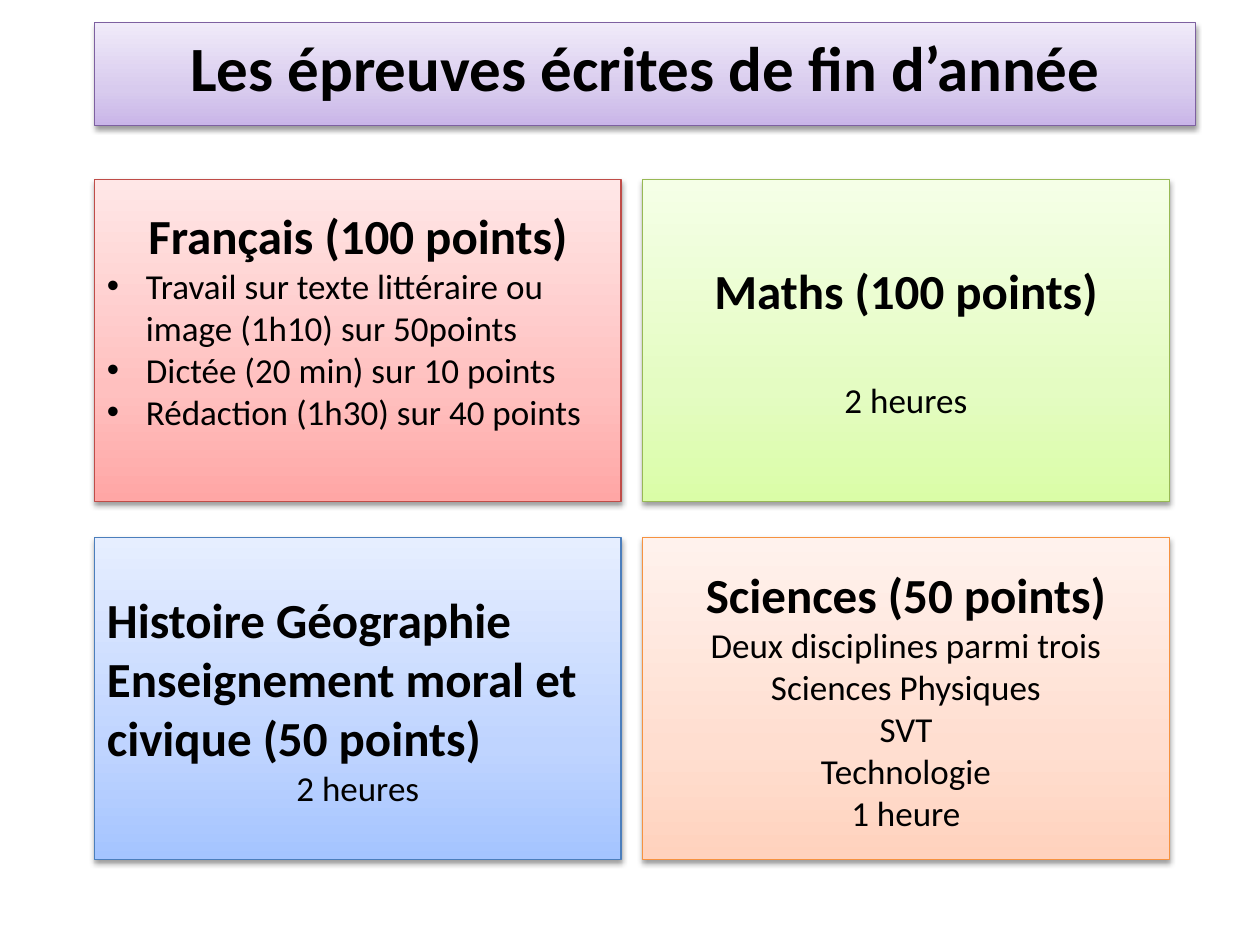
from copy import deepcopy
from lxml.etree import SubElement
from pptx import Presentation
from pptx.dml.color import RGBColor
from pptx.enum.shapes import MSO_SHAPE
from pptx.enum.text import MSO_ANCHOR, MSO_AUTO_SIZE, PP_ALIGN
from pptx.oxml.ns import qn
from pptx.util import Inches, Pt

WIDE, HIGH = 10, 7.5
LEFT, TOP = 0.075 * WIDE, 0.19 * HIGH
CELL_W, CELL_H = 0.418 * WIDE, 0.341 * HIGH
STEP_X, STEP_Y = 0.435 * WIDE, 0.379 * HIGH
STOPS = (0, 0.35, 1)
COLORS = {
    "ink": "000000",
    "violet": ("C9B5E8", "D8CBEE", "F0EAF9", "7D60A0"),
    "red": ("FFA6A5", "FFC0BF", "FFE7E7", "BF4C48"),
    "green": ("DAFDA7", "E4FCC2", "F5FFE7", "98B955"),
    "blue": ("A4C4FF", "BFD4FF", "E6EEFF", "4B7EBC"),
    "orange": ("FFD2BD", "FFDED0", "FFF2ED", "F69240"),
}
HEAD = dict(size=28, bold=True)
ITEM = dict(align=PP_ALIGN.LEFT, bullet=True)
CARDS = [
    ("red", 0.39, [
        ("Français (100 points)", HEAD),
        ("Travail sur texte littéraire ou image (1h10) sur 50points", ITEM),
        ("Dictée (20 min) sur 10 points", ITEM),
        ("Rédaction (1h30) sur 40 points", ITEM),
    ]),
    ("green", 0.05, [
        ("Maths (100 points)", HEAD),
        ("2 heures", dict(before=34)),
    ]),
    ("blue", 0.05, [
        ("Histoire Géographie Enseignement moral et civique (50 points)",
         dict(HEAD, align=PP_ALIGN.LEFT)),
        ("2 heures", {}),
    ]),
    ("orange", 0.05, [
        ("Sciences (50 points)", HEAD),
        ("Deux disciplines parmi trois", {}),
        ("Sciences Physiques", {}),
        ("SVT", {}),
        ("Technologie", {}),
        ("1 heure", {}),
    ]),
]


def write(para, text, size=20, bold=False, align=PP_ALIGN.CENTER, before=0, bullet=False):
    para.alignment = align
    para.space_before = Pt(before)
    run = para.add_run()
    run.text = text
    font = run.font
    font.name, font.size, font.bold = "Calibri", Pt(size), bold
    font.color.rgb = RGBColor.from_string(COLORS["ink"])
    if bullet:
        props = para._p.get_or_add_pPr()
        props.set("marL", str(Inches(0.31)))
        props.set("indent", str(-Inches(0.31)))
        SubElement(props, qn("a:buFont"), typeface="Arial")
        SubElement(props, qn("a:buChar"), char="•")


def shade(shape):
    shape.shadow.inherit = False
    effects = shape._element.spPr.find(qn("a:effectLst"))
    outer = SubElement(effects, qn("a:outerShdw"), blurRad=str(Pt(3.1)),
                       dist=str(Pt(1.6)), dir="5400000", rotWithShape="0")
    color = SubElement(outer, qn("a:srgbClr"), val=COLORS["ink"])
    SubElement(color, qn("a:alpha"), val="38000")


def paint(shape, name):
    *tones, edge = COLORS[name]
    fill = shape.fill
    fill.gradient()
    fill.gradient_angle = 90
    stops = shape._element.spPr.find(".//" + qn("a:gsLst"))
    stops.append(deepcopy(stops[0]))
    for stop, place, tone in zip(fill.gradient_stops, STOPS, tones):
        stop.position = place
        stop.color.rgb = RGBColor.from_string(tone)
    shape.line.color.rgb = RGBColor.from_string(edge)
    shape.line.width = Pt(0.75)
    shade(shape)


def banner(slide, box):
    title = slide.shapes.title
    title.left, title.top, title.width, title.height = map(Inches, box)
    paint(title, "violet")
    frame = title.text_frame
    frame.auto_size = MSO_AUTO_SIZE.NONE
    frame.vertical_anchor = MSO_ANCHOR.TOP
    write(frame.paragraphs[0], "Les épreuves écrites de fin d’année", size=36, bold=True)


def card(slide, box, name, foot, lines):
    shape = slide.shapes.add_shape(MSO_SHAPE.RECTANGLE, *map(Inches, box))
    paint(shape, name)
    frame = shape.text_frame
    frame.word_wrap = True
    frame.vertical_anchor = MSO_ANCHOR.MIDDLE
    frame.margin_bottom = Inches(foot)
    for row, (text, style) in enumerate(lines):
        para = frame.add_paragraph() if row else frame.paragraphs[0]
        write(para, text, **style)


def main():
    deck = Presentation()
    deck.slide_width, deck.slide_height = Inches(WIDE), Inches(HIGH)
    slide = deck.slides.add_slide(deck.slide_layouts[5])
    banner(slide, (LEFT, 0.024 * HIGH, 0.874 * WIDE, 0.109 * HIGH))
    for spot, (name, foot, lines) in enumerate(CARDS):
        row, col = divmod(spot, 2)
        box = (LEFT + col * STEP_X, TOP + row * STEP_Y, CELL_W, CELL_H)
        card(slide, box, name, foot, lines)
    deck.save("out.pptx")


if __name__ == "__main__":
    main()
